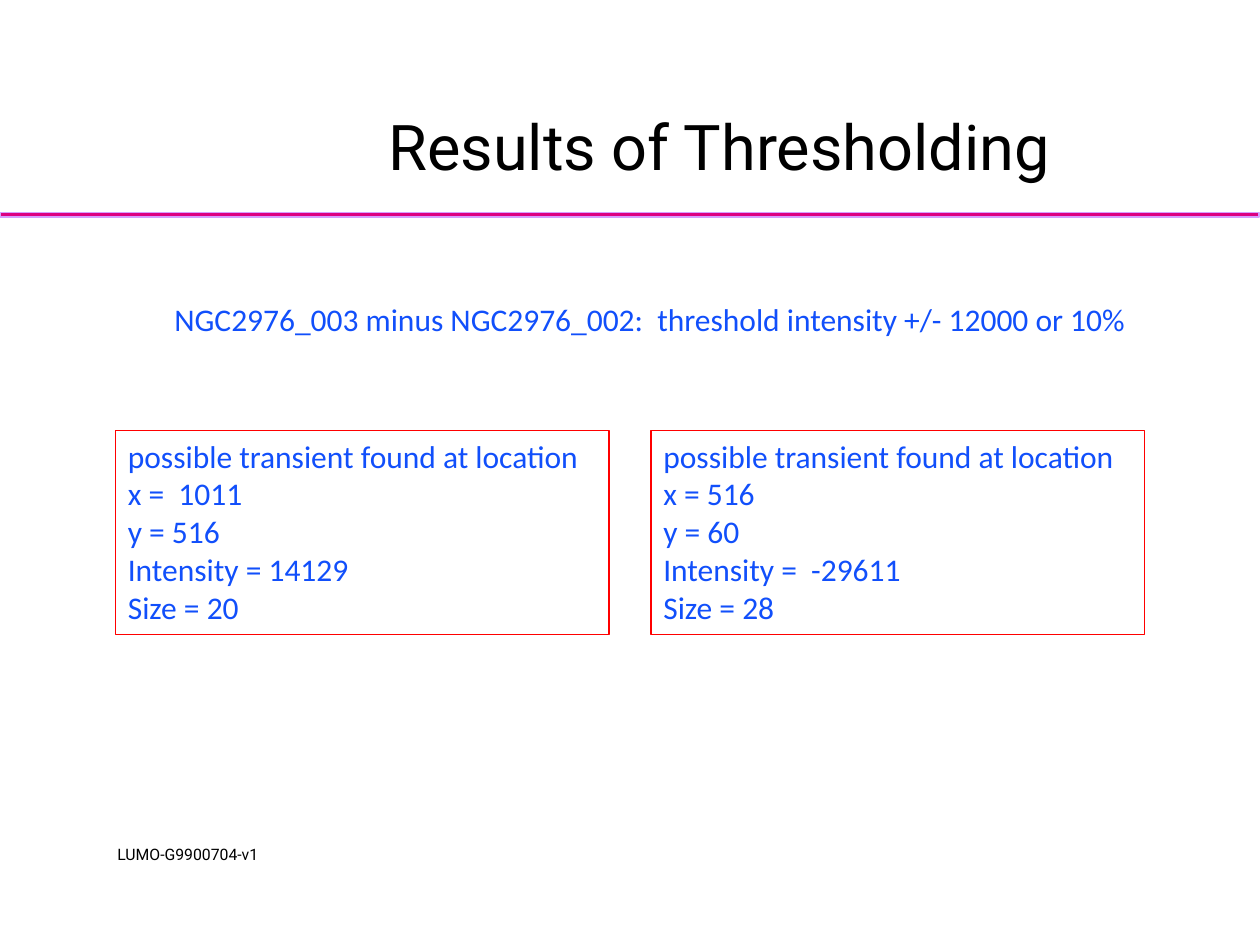
from dataclasses import dataclass

from pptx import Presentation
from pptx.dml.color import RGBColor
from pptx.enum.shapes import MSO_SHAPE as Shape
from pptx.enum.text import MSO_ANCHOR as Anchor, PP_ALIGN as Align
from pptx.util import Pt

COLORS = {
    "black": "000000",
    "text": "114FFB",
    "rule": "DC0081",
    "rule_edge": "D49FFF",
    "frame": "FF0000",
}


@dataclass
class Box:
    left: float
    top: float
    width: float
    height: float

    def lengths(self) -> tuple:
        return Pt(self.left), Pt(self.top), Pt(self.width), Pt(self.height)


@dataclass
class Transient:
    x: str
    y: str
    intensity: str
    size: str

    def text(self) -> str:
        return "\n".join([
            "possible transient found at location",
            f"x = {self.x}",
            f"y = {self.y}",
            f"Intensity = {self.intensity}",
            f"Size = {self.size}",
        ])


def color(name: str) -> RGBColor:
    return RGBColor.from_string(COLORS[name])


def write(shape, text: str, font: str, size: float, color_name: str,
          align=Align.LEFT, anchor=Anchor.TOP) -> None:
    frame = shape.text_frame
    frame.text = text
    frame.word_wrap = True
    frame.vertical_anchor = anchor
    for paragraph in frame.paragraphs:
        paragraph.alignment = align
        for run in paragraph.runs:
            run.font.name = font
            run.font.size = Pt(size)
            run.font.color.rgb = color(color_name)


def add_rectangle(slide, box: Box, line: str, fill: str = ""):
    shape = slide.shapes.add_shape(Shape.RECTANGLE, *box.lengths())
    shape.shadow.inherit = False
    if fill:
        shape.fill.solid()
        shape.fill.fore_color.rgb = color(fill)
    else:
        shape.fill.background()
    shape.line.color.rgb = color(line)
    shape.line.width = Pt(0.75)
    return shape


def add_transients(slide, transients: list[Transient]) -> None:
    left, top, width, height, gap = 66, 246, 282, 116.5, 24
    for index, transient in enumerate(transients):
        box = Box(left + index * (width + gap), top, width, height)
        panel = add_rectangle(slide, box, "frame")
        write(panel, transient.text(), "Calibri", 18, "text")


def main() -> None:
    presentation = Presentation()
    presentation.slide_width, presentation.slide_height = Pt(720), Pt(540)
    slide = presentation.slides.add_slide(presentation.slide_layouts[5])

    title = slide.shapes.title
    title.left, title.top, title.width, title.height = Box(126, 18, 570, 90).lengths()
    write(title, "Results of Thresholding", "Roboto", 36, "black",
          Align.CENTER, Anchor.BOTTOM)

    add_rectangle(slide, Box(0, 121.5, 719.5, 2.5), "rule_edge", "rule")

    summary = slide.shapes.add_textbox(*Box(44.5, 168, 654, 29).lengths())
    write(summary, "NGC2976_003 minus NGC2976_002:  threshold intensity +/- 12000 or 10%",
          "Calibri", 18, "text", Align.CENTER)

    add_transients(slide, [
        Transient(" 1011", "516", "14129", "20"),
        Transient("516", "60", " -29611", "28"),
    ])

    footer = slide.shapes.add_textbox(*Box(60, 476, 596, 24).lengths())
    write(footer, "LUMO-G9900704-v1", "Roboto", 9, "black", anchor=Anchor.MIDDLE)

    presentation.save("out.pptx")


if __name__ == "__main__":
    main()
